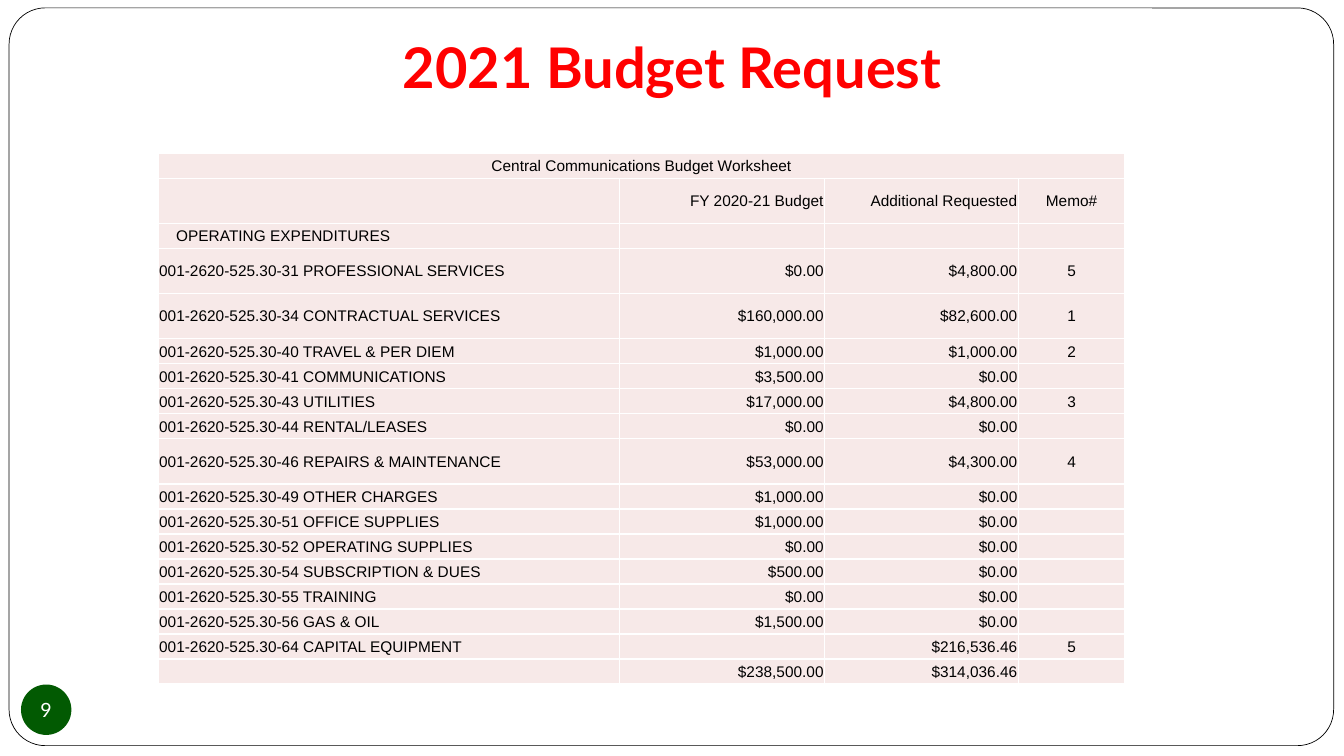
from dataclasses import dataclass

import lxml.etree
import pptx
import pptx.dml.color
import pptx.enum.shapes
import pptx.enum.text
import pptx.oxml.ns
import pptx.util

Cm = pptx.util.Cm
Pt = pptx.util.Pt
RGB = pptx.dml.color.RGBColor
Align = pptx.enum.text.PP_ALIGN
Anchor = pptx.enum.text.MSO_ANCHOR
Shape = pptx.enum.shapes.MSO_SHAPE
qn = pptx.oxml.ns.qn


@dataclass(frozen=True)
class Theme:
    heading_font: str = "Lato"
    table_font: str = "Arial"
    title_size: float = 40
    number_size: float = 14
    table_size: float = 11
    red: str = "FF0000"
    green: str = "025A02"
    black: str = "000000"
    white: str = "FFFFFF"
    pink: str = "F7E9E8"


@dataclass(frozen=True)
class Box:
    left: float
    top: float
    width: float
    height: float

    def lengths(self) -> tuple:
        return Cm(self.left), Cm(self.top), Cm(self.width), Cm(self.height)


@dataclass(frozen=True)
class BudgetLine:
    account: str = ""
    budget: str = ""
    requested: str = ""
    memo: str = ""
    tall: bool = False
    indent: float = 0.02


THEME = Theme()
TABLE_TITLE = "Central Communications Budget Worksheet"
COLUMN_WIDTHS = (11.63, 5.16, 4.88, 2.69)
COLUMN_ALIGNS = (Align.LEFT, Align.RIGHT, Align.RIGHT, Align.CENTER)
ROW_HEIGHT, TALL_ROW_HEIGHT = 0.63, 1.14

BUDGET_LINES = (
    BudgetLine("", "FY 2020-21 Budget", "Additional Requested", "Memo#", tall=True),
    BudgetLine("OPERATING EXPENDITURES", indent=0.45),
    BudgetLine("001-2620-525.30-31 PROFESSIONAL SERVICES", "$0.00", "$4,800.00", "5", tall=True),
    BudgetLine("001-2620-525.30-34 CONTRACTUAL SERVICES", "$160,000.00", "$82,600.00", "1", tall=True),
    BudgetLine("001-2620-525.30-40 TRAVEL & PER DIEM", "$1,000.00", "$1,000.00", "2"),
    BudgetLine("001-2620-525.30-41 COMMUNICATIONS", "$3,500.00", "$0.00"),
    BudgetLine("001-2620-525.30-43 UTILITIES", "$17,000.00", "$4,800.00", "3"),
    BudgetLine("001-2620-525.30-44 RENTAL/LEASES", "$0.00", "$0.00"),
    BudgetLine("001-2620-525.30-46 REPAIRS & MAINTENANCE", "$53,000.00", "$4,300.00", "4", tall=True),
    BudgetLine("001-2620-525.30-49 OTHER CHARGES", "$1,000.00", "$0.00"),
    BudgetLine("001-2620-525.30-51 OFFICE SUPPLIES", "$1,000.00", "$0.00"),
    BudgetLine("001-2620-525.30-52 OPERATING SUPPLIES", "$0.00", "$0.00"),
    BudgetLine("001-2620-525.30-54 SUBSCRIPTION & DUES", "$500.00", "$0.00"),
    BudgetLine("001-2620-525.30-55 TRAINING", "$0.00", "$0.00"),
    BudgetLine("001-2620-525.30-56 GAS & OIL", "$1,500.00", "$0.00"),
    BudgetLine("001-2620-525.30-64 CAPITAL EQUIPMENT", "", "$216,536.46", "5"),
    BudgetLine("", "$238,500.00", "$314,036.46"),
)


def write(frame, text: str, align, font: str, size: float, color: str, bold: bool = False) -> None:
    paragraph = frame.paragraphs[0]
    paragraph.alignment = align
    if text:
        paragraph.add_run().text = text
    else:
        lxml.etree.SubElement(paragraph._p, qn("a:endParaRPr"), sz=str(int(size * 100)))
    paragraph.font.name = font
    paragraph.font.size = Pt(size)
    paragraph.font.bold = bold
    paragraph.font.color.rgb = RGB.from_string(color)


def set_margins(target, left: float, top: float, right: float, bottom: float) -> None:
    target.margin_left, target.margin_top = Cm(left), Cm(top)
    target.margin_right, target.margin_bottom = Cm(right), Cm(bottom)


def add_panel(slide, preset, box: Box, fill: str):
    panel = slide.shapes.add_shape(preset, *box.lengths())
    panel.shadow.inherit = False
    panel.fill.solid()
    panel.fill.fore_color.rgb = RGB.from_string(fill)
    return panel


def add_frame(slide) -> None:
    frame = add_panel(slide, Shape.ROUNDED_RECTANGLE, Box(0.23, 0.2, 33.38, 18.59), THEME.white)
    frame.adjustments[0] = 0.049
    frame.line.color.rgb = RGB.from_string(THEME.black)
    frame.line.width = Pt(0.5)


def add_title(slide) -> None:
    title = slide.shapes.add_textbox(*Box(5.51, 0.69, 22.86, 3.18).lengths()).text_frame
    title.word_wrap = True
    set_margins(title, 0.25, 0.13, 0.25, 0.25)
    write(title, "2021 Budget Request", Align.CENTER, THEME.heading_font,
          THEME.title_size, THEME.red, bold=True)


def add_page_number(slide) -> None:
    badge = add_panel(slide, Shape.OVAL, Box(0.53, 17.25, 1.27, 1.27), THEME.green)
    badge.line.fill.background()
    number = badge.text_frame
    number.word_wrap = False
    number.vertical_anchor = Anchor.MIDDLE
    set_margins(number, 0, 0, 0, 0)
    write(number, "9", Align.CENTER, THEME.heading_font, THEME.number_size, THEME.white)


def fill_cell(cell, text: str, align, indent: float = 0.02) -> None:
    cell.vertical_anchor = Anchor.MIDDLE
    set_margins(cell, indent, 0.02, 0.02, 0)
    write(cell.text_frame, text, align, THEME.table_font, THEME.table_size, THEME.black)
    cell.fill.solid()
    cell.fill.fore_color.rgb = RGB.from_string(THEME.pink)
    properties = cell._tc.get_or_add_tcPr()
    for position, side in enumerate(("a:lnL", "a:lnR", "a:lnT", "a:lnB")):
        border = lxml.etree.Element(qn(side), w=str(Pt(1)))
        solid = lxml.etree.SubElement(border, qn("a:solidFill"))
        lxml.etree.SubElement(solid, qn("a:srgbClr"), val=THEME.white)
        properties.insert(position, border)


def add_budget_table(slide) -> None:
    heights = [ROW_HEIGHT] + [TALL_ROW_HEIGHT if line.tall else ROW_HEIGHT for line in BUDGET_LINES]
    box = Box(3.99, 3.86, sum(COLUMN_WIDTHS), sum(heights))
    table = slide.shapes.add_table(len(heights), len(COLUMN_WIDTHS), *box.lengths()).table
    table.first_row = False
    table.horz_banding = False
    for column, width in zip(table.columns, COLUMN_WIDTHS):
        column.width = Cm(width)
    for row, height in zip(table.rows, heights):
        row.height = Cm(height)

    table.cell(0, 0).merge(table.cell(0, len(COLUMN_WIDTHS) - 1))
    for column in range(len(COLUMN_WIDTHS)):
        fill_cell(table.cell(0, column), "" if column else TABLE_TITLE, Align.CENTER)
    for row, line in enumerate(BUDGET_LINES, start=1):
        entries = (line.account, line.budget, line.requested, line.memo)
        for column, (entry, align) in enumerate(zip(entries, COLUMN_ALIGNS)):
            fill_cell(table.cell(row, column), entry, align, 0.02 if column else line.indent)


def main() -> None:
    presentation = pptx.Presentation()
    presentation.slide_width = Cm(33.87)
    presentation.slide_height = Cm(19.05)
    slide = presentation.slides.add_slide(presentation.slide_layouts[6])
    add_frame(slide)
    add_title(slide)
    add_page_number(slide)
    add_budget_table(slide)
    presentation.save("out.pptx")


if __name__ == "__main__":
    main()
